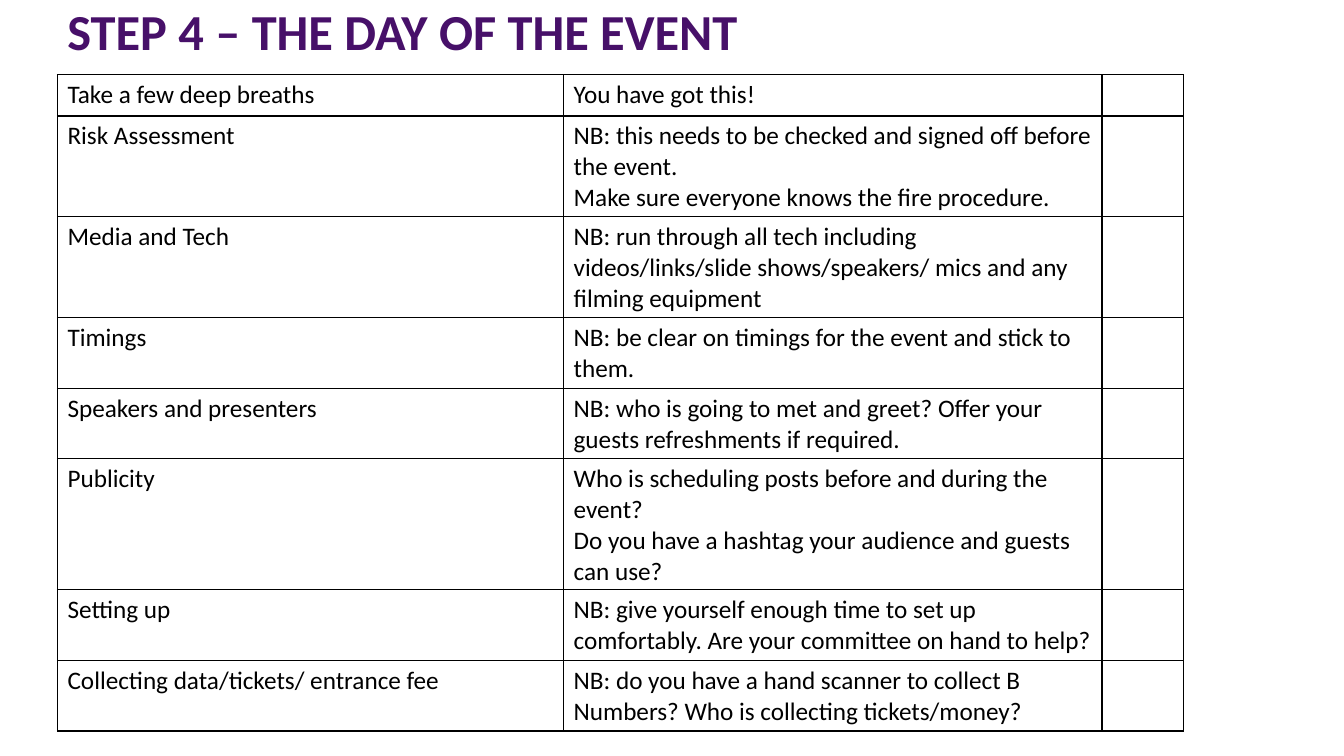
from pptx import Presentation
from pptx.dml.color import RGBColor
from pptx.enum import text as t
from pptx.oxml import parse_xml
from pptx.oxml.ns import nsdecls
from pptx.util import Inches, Pt

PURPLE = RGBColor(0x47, 0x10, 0x69)
BLACK = RGBColor(0, 0, 0)
FACE = "Calibri"
COLS = (5.02, 5.34, 0.81)
ROW = 0.41
TASKS = [
    ("Take a few deep breaths", "You have got this!"),
    ("Risk Assessment",
     "NB: this needs to be checked and signed off before the event.\n"
     "Make sure everyone knows the fire procedure."),
    ("Media and Tech",
     "NB: run through all tech including videos/links/slide shows/speakers/ "
     "mics and any filming equipment"),
    ("Timings", "NB: be clear on timings for the event and stick to them."),
    ("Speakers and presenters",
     "NB: who is going to met and greet? Offer your guests refreshments if required."),
    ("Publicity",
     "Who is scheduling posts before and during the event?\n"
     "Do you have a hashtag your audience and guests can use?"),
    ("Setting up",
     "NB: give yourself enough time to set up comfortably. "
     "Are your committee on hand to help?"),
    ("Collecting data/tickets/ entrance fee",
     "NB: do you have a hand scanner to collect B Numbers? "
     "Who is collecting tickets/money?"),
]


def style(frame, size, color, bold=False):
    for para in frame.paragraphs:
        font = para.font
        font.name, font.size, font.bold = FACE, Pt(size), bold
        font.color.rgb = color


def border(cell):
    props = cell._tc.get_or_add_tcPr()
    for at, side in enumerate(("lnL", "lnR", "lnT", "lnB")):
        props.insert(at, parse_xml(
            f'<a:{side} {nsdecls("a")} w="{Pt(1)}"><a:solidFill>'
            f'<a:srgbClr val="{BLACK}"/></a:solidFill></a:{side}>'))


def add_title(slide, left, top, width, height):
    box = slide.shapes.add_textbox(*map(Inches, (left, top, width, height)))
    frame = box.text_frame
    frame.word_wrap = True
    frame.vertical_anchor = t.MSO_ANCHOR.MIDDLE
    frame.text = "STEP 4 – THE DAY OF THE EVENT"
    style(frame, 36, PURPLE, True)


def add_tasks(slide, left, top, width, height):
    shape = slide.shapes.add_table(
        len(TASKS), len(COLS), *map(Inches, (left, top, width, height)))
    table = shape.table
    table.first_row = table.horz_banding = False
    for col, wide in zip(table.columns, COLS):
        col.width = Inches(wide)
    for row, task in zip(table.rows, TASKS):
        row.height = Inches(ROW)
        for cell, words in zip(row.cells, (*task, "")):
            cell.text = words
            style(cell.text_frame, 18, BLACK)
            cell.fill.background()
            border(cell)
    shape.height = Inches(height)


def main():
    deck = Presentation()
    deck.slide_width, deck.slide_height = Inches(13.33), Inches(7.5)
    slide = deck.slides.add_slide(deck.slide_layouts[6])
    add_title(slide, 0.57, 0, 12, 0.6)
    add_tasks(slide, 0.57, 0.74, sum(COLS), 6.6)
    deck.save("out.pptx")


if __name__ == "__main__":
    main()
